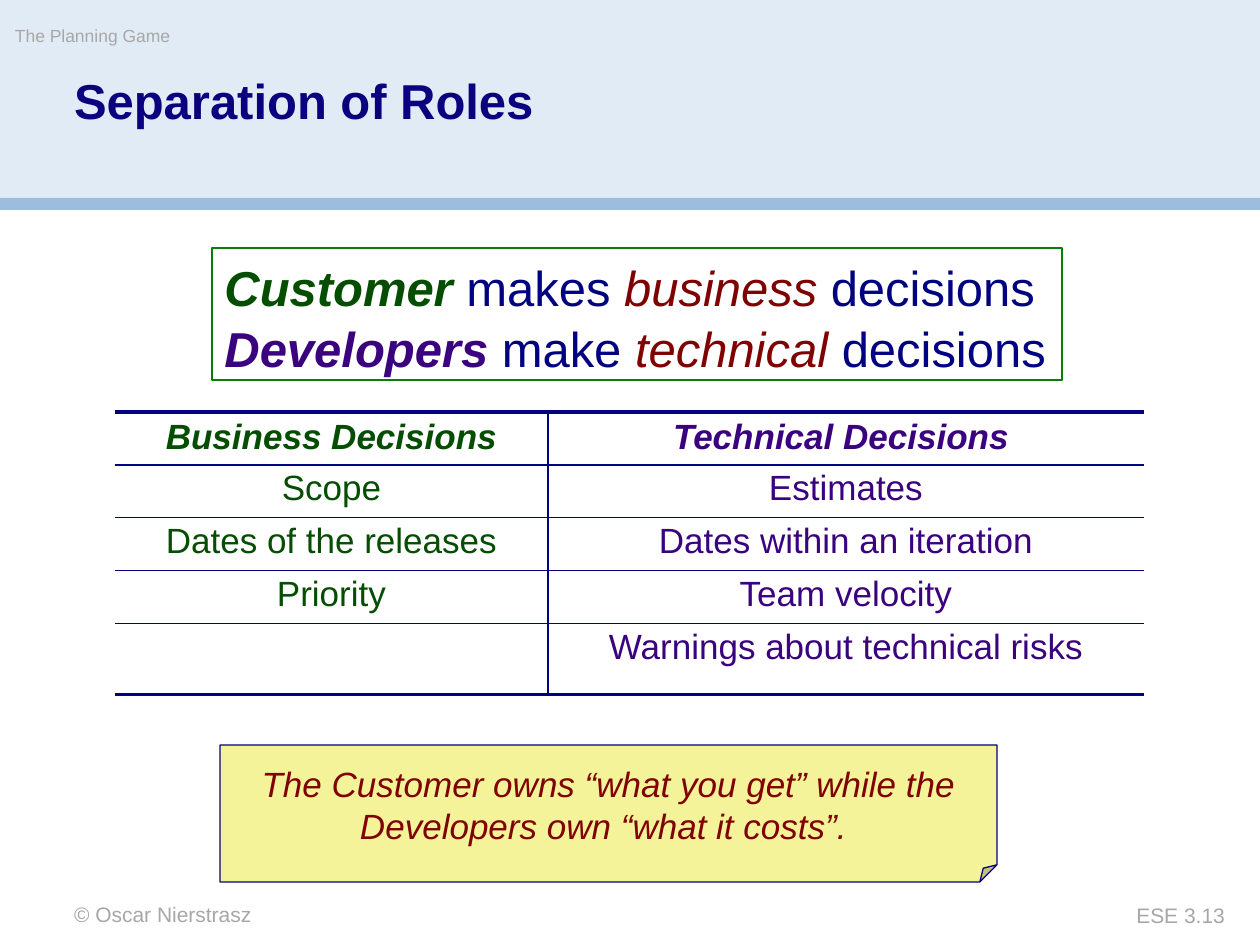
from lxml import etree
from pptx import Presentation
from pptx.dml.color import RGBColor
from pptx.enum.shapes import MSO_SHAPE
from pptx.enum.text import MSO_ANCHOR, PP_ALIGN
from pptx.oxml.ns import qn
from pptx.util import Emu, Pt

PX = 914400 / 126
COLORS = {
    "band": "E1EBF5", "rule": "9CBDDE", "grey": "A7A7A7", "title": "0A017F",
    "navy": "00027F", "green": "044D01", "purple": "3A027F", "red": "7F0101",
    "frame": "087F02", "note": "F5F399", "edge": "05027D",
}


def box(x, y, w, h, kind=None, fill=None, line=None):
    at = [Emu(round(v * PX)) for v in (x, y, w, h)]
    if kind is None:
        sp = s.shapes.add_textbox(*at)
        tf = sp.text_frame
        tf.margin_left = tf.margin_right = tf.margin_top = tf.margin_bottom = 0
    else:
        sp = s.shapes.add_shape(kind, *at)
        sp.shadow.inherit = False
        if fill:
            sp.fill.solid()
            sp.fill.fore_color.rgb = RGBColor.from_string(COLORS[fill])
        else:
            sp.fill.background()
        if line:
            sp.line.color.rgb = RGBColor.from_string(COLORS[line])
            sp.line.width = Pt(0.75)
        else:
            sp.line.fill.background()
    sp.text_frame.word_wrap = True
    return sp


def write(p, runs, size, align=PP_ALIGN.LEFT, spacing=None):
    p.alignment = align
    p.line_spacing = spacing
    for text, color, style in runs:
        r = p.add_run()
        r.text = text
        r.font.name = "Arial"
        r.font.size = Pt(size)
        r.font.bold = "b" in style
        r.font.italic = "i" in style
        r.font.color.rgb = RGBColor.from_string(COLORS[color])


prs = Presentation()
prs.slide_width = Emu(round(1260 * PX))
prs.slide_height = Emu(round(945 * PX))
s = prs.slides.add_slide(prs.slide_layouts[6])

box(0, 0, 1260, 199, MSO_SHAPE.RECTANGLE, "band")
box(0, 198, 1260, 12, MSO_SHAPE.RECTANGLE, "rule")

labels = [
    (74, 902, 525, 25, "© Oscar Nierstrasz", 12, "grey", "", PP_ALIGN.LEFT, None),
    (15, 25, 743, 35, "The Planning Game", 10, "grey", "", PP_ALIGN.LEFT, None),
    (1039, 903, 186, 25, "ESE 3.13", 12, "grey", "", PP_ALIGN.RIGHT, None),
    (74, 77, 1113, 112, "Separation of Roles", 28, "title", "b", PP_ALIGN.LEFT, 0.9),
]
for x, y, w, h, text, size, color, style, align, spacing in labels:
    sp = box(x, y, w, h)
    write(sp.text_frame.paragraphs[0], [(text, color, style)], size, align, spacing)

roles = [
    ("Customer", "green", " makes ", "business"),
    ("Developers", "purple", " make ", "technical"),
]
tf = box(212, 248, 850, 132, MSO_SHAPE.RECTANGLE, line="frame").text_frame
tf.word_wrap = False
tf.vertical_anchor = MSO_ANCHOR.TOP
for i, (who, color, verb, kind) in enumerate(roles):
    p = tf.add_paragraph() if i else tf.paragraphs[0]
    runs = [(who, color, "bi"), (verb, "navy", ""), (kind, "red", "i"), (" decisions", "navy", "")]
    write(p, runs, 28, spacing=1.05)

rows = [
    ("Business Decisions", "Technical Decisions "),
    ("Scope", "Estimates"),
    ("Dates of the releases", "Dates within an iteration"),
    ("Priority", "Team velocity"),
    ("", "Warnings about technical risks"),
]
widths = [433, 596]
heights = [53, 52, 53, 53, 71]
at = [Emu(round(v * PX)) for v in (115, 412, sum(widths), sum(heights))]
table = s.shapes.add_table(len(rows), len(widths), *at).table
table.first_row = False
table.horz_banding = False
for col, w in zip(table.columns, widths):
    col.width = Emu(round(w * PX))
for row, h in zip(table.rows, heights):
    row.height = Emu(round(h * PX))

last = len(rows) - 1
for i, texts in enumerate(rows):
    for j, text in enumerate(texts):
        cell = table.cell(i, j)
        borders = {
            "a:lnL": 1 if j == 1 else 0,
            "a:lnR": 1 if j == 0 else 0,
            "a:lnT": 2.25 if i == 0 else 1,
            "a:lnB": 2.25 if i == last else 1,
        }
        tcPr = cell._tc.get_or_add_tcPr()
        for tag, width in borders.items():
            ln = etree.SubElement(tcPr, qn(tag), w=str(int(Pt(width))))
            if width:
                fill = etree.SubElement(ln, qn("a:solidFill"))
                etree.SubElement(fill, qn("a:srgbClr"), val=COLORS["navy"])
            else:
                etree.SubElement(ln, qn("a:noFill"))
        cell.fill.background()
        cell.vertical_anchor = MSO_ANCHOR.TOP if i else MSO_ANCHOR.MIDDLE
        if text:
            run = (text, ("green", "purple")[j], "" if i else "bi")
            write(cell.text_frame.paragraphs[0], [run], 20, PP_ALIGN.CENTER, 0.95)

sp = box(220, 745, 777, 137, MSO_SHAPE.FOLDED_CORNER, "note", "edge")
avLst = sp._element.spPr.find(qn("a:prstGeom")).find(qn("a:avLst"))
etree.SubElement(avLst, qn("a:gd"), name="adj", fmla="val 12500")
tf = sp.text_frame
tf.vertical_anchor = MSO_ANCHOR.MIDDLE
note = "The Customer owns “what you get” while the Developers own “what it costs”. "
write(tf.paragraphs[0], [(note, "red", "i")], 20, PP_ALIGN.CENTER)

prs.save("out.pptx")
